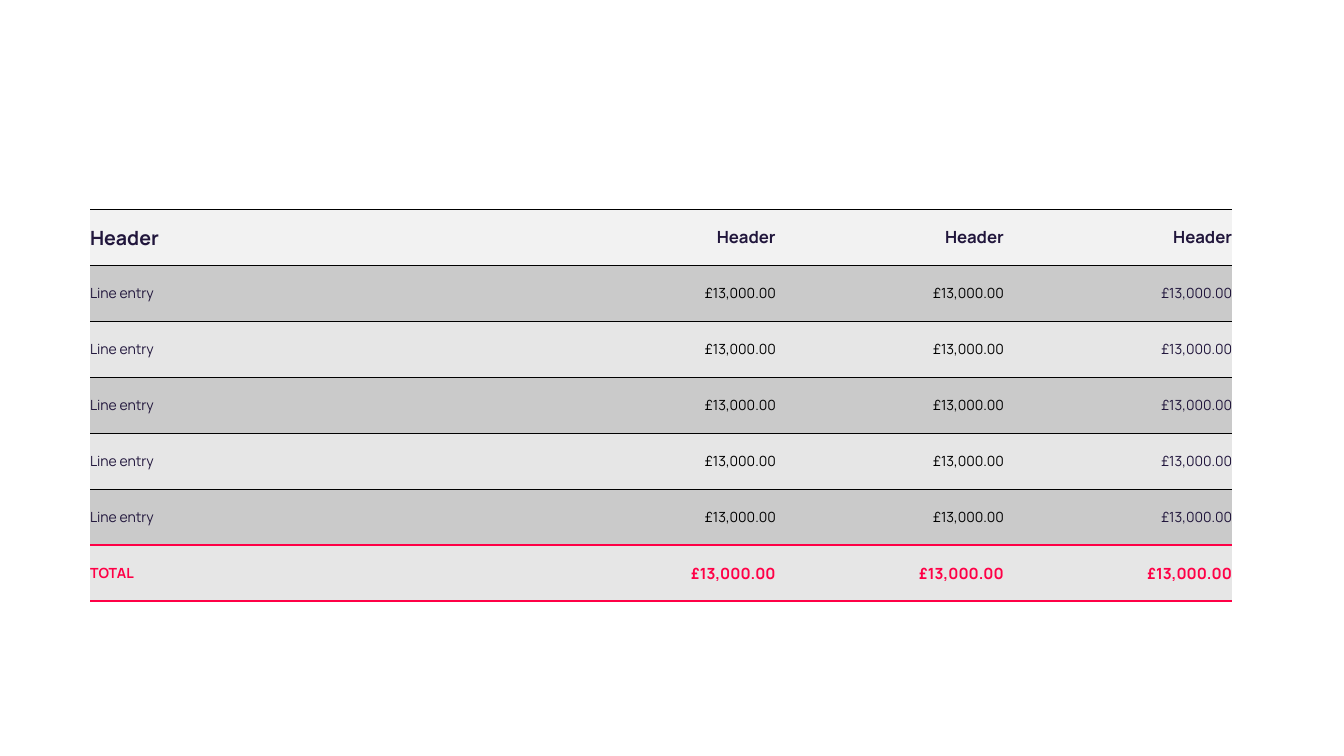
from lxml.etree import SubElement
from pptx import Presentation
from pptx.dml.color import RGBColor
from pptx.enum.text import MSO_ANCHOR, PP_ALIGN
from pptx.oxml.ns import qn
from pptx.util import Cm, Pt

NAVY = RGBColor(0x21, 0x16, 0x3C)
BLACK = RGBColor(0x00, 0x00, 0x00)
PINK = RGBColor(0xFF, 0x00, 0x46)
HEADER_GREY = RGBColor(0xF2, 0xF2, 0xF2)
DARK_GREY = RGBColor(0xCA, 0xCA, 0xCA)
LIGHT_GREY = RGBColor(0xE6, 0xE6, 0xE6)

THIN_RULE = (BLACK, 0.75)
TOTAL_RULE = (PINK, 1.5)
COLUMN_WIDTHS = (11.53, 5.75, 5.75, 5.75)
ROW_HEIGHT = 1.41
ENTRY_COUNT = 5
AMOUNT = "£13,000.00"


class SlideBuilder:
    """Holds the font and the current slide."""

    def __init__(self, slide, font_name):
        self.slide = slide
        self.font_name = font_name

    def add_table(self, left, top, row_count):
        shape = self.slide.shapes.add_table(
            row_count, len(COLUMN_WIDTHS), Cm(left), Cm(top),
            Cm(sum(COLUMN_WIDTHS)), Cm(ROW_HEIGHT * row_count))
        table = shape.table
        table.first_row = table.horz_banding = False
        for column, width in zip(table.columns, COLUMN_WIDTHS):
            column.width = Cm(width)
        for row in table.rows:
            row.height = Cm(ROW_HEIGHT)
        return table

    def set_borders(self, cell, top, bottom):
        properties = cell._tc.get_or_add_tcPr()
        for side in ("L", "R"):
            line = SubElement(properties, qn(f"a:ln{side}"), w="0")
            SubElement(line, qn("a:noFill"))
        for side, (color, width) in (("T", top), ("B", bottom)):
            line = SubElement(properties, qn(f"a:ln{side}"), w=str(Pt(width)))
            fill = SubElement(line, qn("a:solidFill"))
            SubElement(fill, qn("a:srgbClr"), val=str(color))

    def fill_row(self, row, texts, sizes, colors, bold, fill, top, bottom):
        for index, cell in enumerate(row.cells):
            is_label = index == 0
            self.set_borders(cell, top, bottom)
            cell.fill.solid()
            cell.fill.fore_color.rgb = fill
            cell.vertical_anchor = MSO_ANCHOR.MIDDLE
            cell.margin_left = Cm(0 if is_label else 0.25)
            cell.margin_right = Cm(0.25 if is_label else 0)
            cell.margin_top = cell.margin_bottom = Cm(0.13)
            paragraph = cell.text_frame.paragraphs[0]
            paragraph.alignment = PP_ALIGN.LEFT if is_label else PP_ALIGN.RIGHT
            run = paragraph.add_run()
            run.text = texts[index]
            run.font.name = self.font_name
            run.font.size = Pt(sizes[index])
            run.font.bold = bold
            run.font.color.rgb = colors[index]


def main():
    presentation = Presentation()
    presentation.slide_width = Cm(33.87)
    presentation.slide_height = Cm(19.05)
    slide = presentation.slides.add_slide(presentation.slide_layouts[6])
    builder = SlideBuilder(slide, "Manrope")
    table = builder.add_table(2.27, 5.28, ENTRY_COUNT + 2)
    header, *entries, total = table.rows

    # Header row
    builder.fill_row(header, ["Header"] * 4, [14, 12, 12, 12], [NAVY] * 4,
                     True, HEADER_GREY, THIN_RULE, THIN_RULE)

    # Line entries in alternating greys
    for index, row in enumerate(entries):
        is_last = index == ENTRY_COUNT - 1
        builder.fill_row(row, ["Line entry"] + [AMOUNT] * 3, [10] * 4,
                         [NAVY, BLACK, BLACK, NAVY], False,
                         LIGHT_GREY if index % 2 else DARK_GREY,
                         THIN_RULE, TOTAL_RULE if is_last else THIN_RULE)

    # Total row
    builder.fill_row(total, ["TOTAL"] + [AMOUNT] * 3, [10, 11, 11, 11],
                     [PINK] * 4, True, LIGHT_GREY, TOTAL_RULE, TOTAL_RULE)

    presentation.save("out.pptx")


if __name__ == "__main__":
    main()
